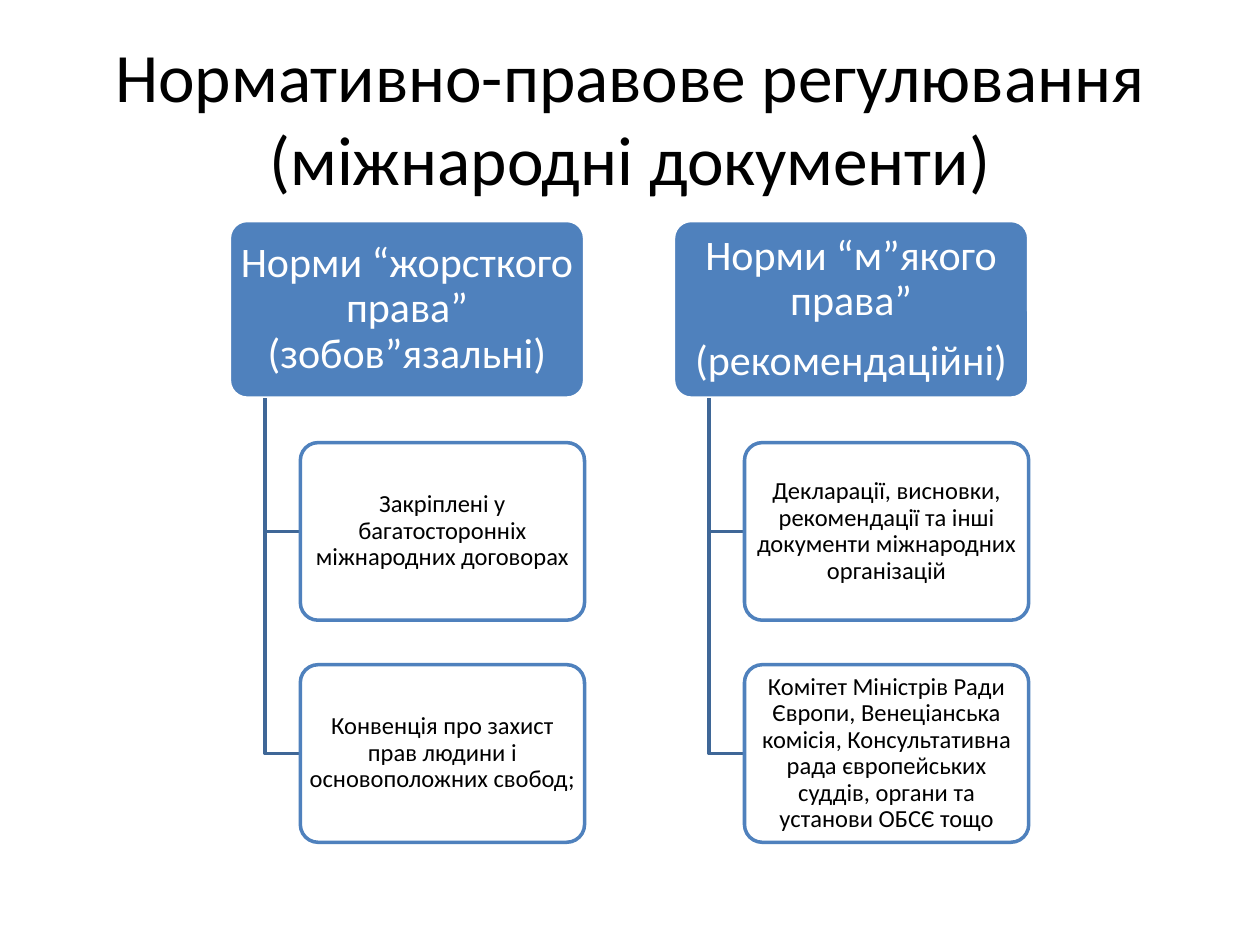
from lxml import etree
from pptx import Presentation
from pptx.dml.color import RGBColor
from pptx.enum.shapes import MSO_SHAPE
from pptx.enum.text import MSO_ANCHOR, MSO_AUTO_SIZE, PP_ALIGN
from pptx.oxml.ns import qn
from pptx.util import Inches, Pt

ROUNDED = MSO_SHAPE.ROUNDED_RECTANGLE
MIDDLE = MSO_ANCHOR.MIDDLE
CENTER = PP_ALIGN.CENTER
NO_FIT = MSO_AUTO_SIZE.NONE
TITLE_ONLY = 5

LEFT, TOP = 1.82, 1.75
BOX_HEIGHT = 1.41
BOX_WIDTH = 2 * BOX_HEIGHT
PITCH = 1.25
INDENT = 0.2
TRUNK = 0.1

TITLE = ["Нормативно-правове регулювання", "(міжнародні документи)"]
BRANCHES = [
    (["Норми “жорсткого права” (зобов”язальні)"],
     ["Закріплені у багатосторонніх міжнародних договорах",
      "Конвенція про захист прав людини і основоположних свобод;"]),
    (["Норми “м”якого права”", "(рекомендаційні)"],
     ["Декларації, висновки, рекомендації та інші документи міжнародних організацій",
      "Комітет Міністрів Ради Європи, Венеціанська комісія, Консультативна рада "
      "європейських суддів, органи та установи ОБСЄ тощо"]),
]


def color(value):
    return RGBColor.from_string(value)


def column_left(column):
    return LEFT + column * BOX_WIDTH * PITCH


def row_top(row):
    return TOP + row * BOX_HEIGHT * PITCH


class HierarchySlide:
    font = "Calibri"
    black, white = "000000", "FFFFFF"
    accent, branch = "4F81BD", "3F6797"
    line_width = Pt(2)

    def __init__(self, presentation):
        self.slide = presentation.slides.add_slide(presentation.slide_layouts[TITLE_ONLY])

    def add_text(self, paragraph, text, size, text_color):
        run = paragraph.add_run()
        run.text = text
        run.font.name = self.font
        run.font.size = Pt(size)
        run.font.color.rgb = color(text_color)

    def outline(self, shape, line_color):
        shape.shadow.inherit = False
        shape.line.color.rgb = color(line_color)
        shape.line.width = self.line_width

    def title(self, lines):
        shape = self.slide.shapes.title
        shape.left, shape.top = Inches(0.5), Inches(0.3)
        shape.width, shape.height = Inches(9), Inches(1.25)
        frame = shape.text_frame
        frame.auto_size = NO_FIT
        frame.vertical_anchor = MIDDLE
        paragraph = frame.paragraphs[0]
        paragraph.alignment = CENTER
        for index, line in enumerate(lines):
            if index:
                paragraph.add_line_break()
            self.add_text(paragraph, line, 39.6, self.black)

    def box(self, column, row, texts, indent, size, inset, colors, opacity=None):
        fill_color, line_color, text_color = colors
        shape = self.slide.shapes.add_shape(
            ROUNDED, Inches(column_left(column) + indent * BOX_WIDTH), Inches(row_top(row)),
            Inches((1 - indent) * BOX_WIDTH), Inches(BOX_HEIGHT))
        shape.adjustments[0] = 0.1
        self.outline(shape, line_color)
        shape.fill.solid()
        shape.fill.fore_color.rgb = color(fill_color)
        if opacity:
            fill = shape._element.spPr.find(qn("a:solidFill"))
            etree.SubElement(fill[0], qn("a:alpha")).set("val", str(opacity * 1000))
        frame = shape.text_frame
        frame.word_wrap = True
        frame.vertical_anchor = MIDDLE
        frame.margin_left = frame.margin_right = Inches(inset)
        frame.margin_top = frame.margin_bottom = Inches(inset * 0.65)
        for index, text in enumerate(texts):
            paragraph = frame.add_paragraph() if index else frame.paragraphs[0]
            paragraph.alignment = CENTER
            paragraph.line_spacing = 0.9
            paragraph.space_after = Pt(0.35 * size)
            self.add_text(paragraph, text, size, text_color)

    def header(self, column, texts):
        self.box(column, 0, texts, 0, 24, 0.05, (self.accent, self.white, self.white))

    def item(self, column, row, text):
        self.box(column, row, [text], INDENT, 14, 0.03,
                 (self.white, self.accent, self.black), opacity=90)

    def elbow(self, column, row):
        trunk = Inches(column_left(column) + TRUNK * BOX_WIDTH)
        end = Inches(column_left(column) + INDENT * BOX_WIDTH)
        middle = Inches(row_top(row) + BOX_HEIGHT / 2)
        builder = self.slide.shapes.build_freeform(trunk, Inches(TOP + BOX_HEIGHT))
        builder.add_line_segments([(trunk, middle), (end, middle)], close=False)
        shape = builder.convert_to_shape()
        shape.fill.background()
        self.outline(shape, self.branch)


def main():
    presentation = Presentation()
    presentation.slide_width, presentation.slide_height = Inches(10), Inches(7.5)
    hierarchy = HierarchySlide(presentation)
    hierarchy.title(TITLE)
    for column, (heading, items) in enumerate(BRANCHES):
        hierarchy.header(column, heading)
        for row, text in enumerate(items, start=1):
            hierarchy.elbow(column, row)
            hierarchy.item(column, row, text)
    presentation.save("out.pptx")


if __name__ == "__main__":
    main()
